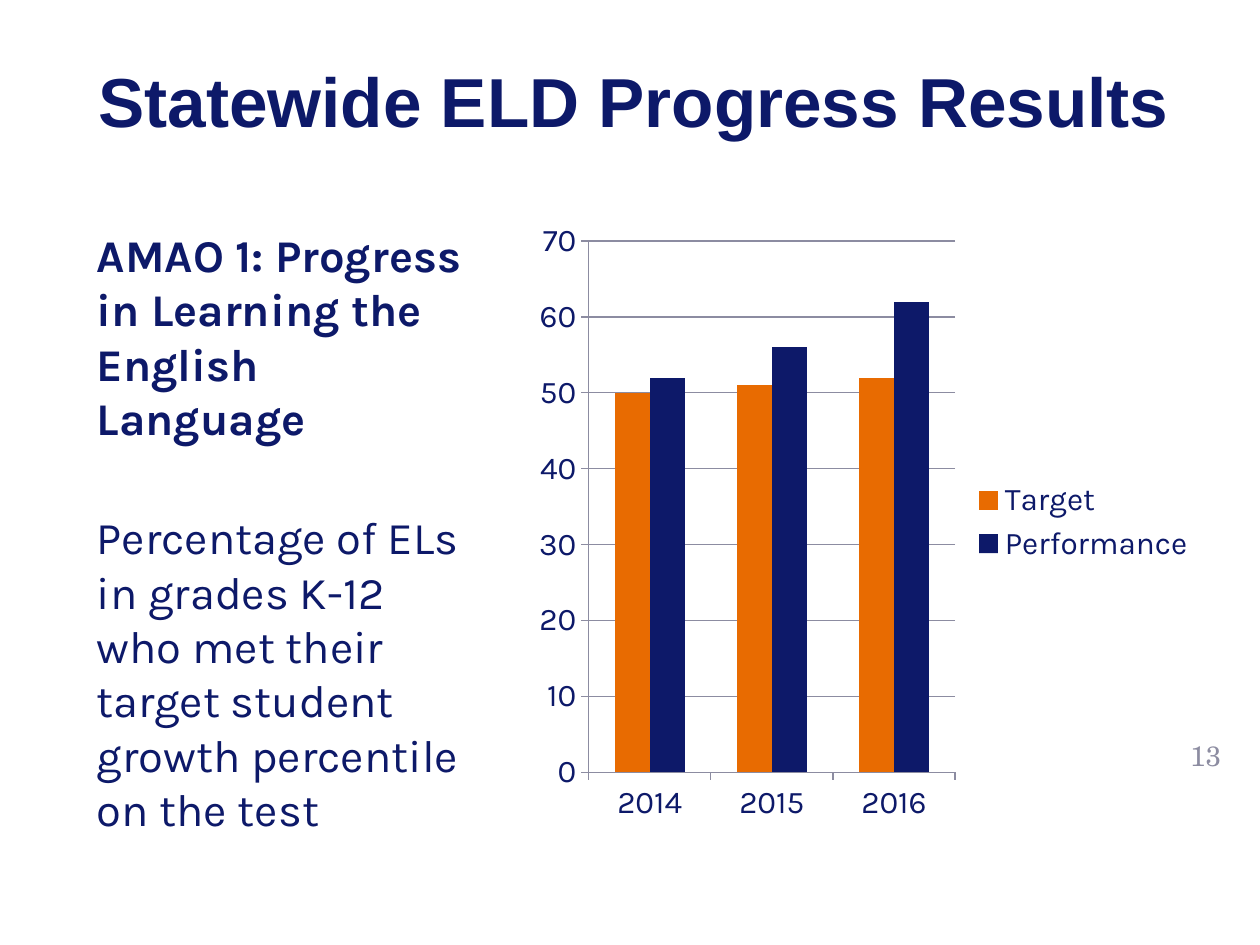
from pptx import Presentation
from pptx.chart.data import CategoryChartData as Data
from pptx.dml.color import RGBColor as Rgb
from pptx.enum.chart import XL_CHART_TYPE as Kind, XL_LEGEND_POSITION as Side, XL_TICK_MARK as Tick
from pptx.enum.text import MSO_ANCHOR as Anchor, PP_ALIGN as Align
from pptx.util import Cm, Pt

NAVY, ORANGE, GREY = "0D1969", "E86B01", "8C8CA1"
TITLE = ["Statewide ELD Progress Results"]
BODY = ["AMAO 1: Progress in Learning the English Language",
        "Percentage of ELs in grades K-12 who met their target student "
        "growth percentile on the test"]
PAGE = ["13"]
YEARS = ["2014", "2015", "2016"]
SERIES = [("Target", [50, 51, 52], ORANGE), ("Performance", [52, 56, 62], NAVY)]


def style(font, face, size, tint, bold=False):
    """Set the face, size, colour and weight of a font."""
    font.name, font.size, font.bold = face, Pt(size), bold
    font.color.rgb = Rgb.from_string(tint)


def write(slide, box, lines, face, size, tint, bold=0, gap=0,
          align=Align.CENTER, anchor=Anchor.MIDDLE):
    """Add a text box whose first `bold` paragraphs are bold."""
    frame = slide.shapes.add_textbox(*map(Cm, box)).text_frame
    frame.word_wrap, frame.vertical_anchor = True, anchor
    frame.text = "\n".join(lines)
    for i, para in enumerate(frame.paragraphs):
        para.alignment = align
        style(para.font, face, size, tint, i < bold)
        if i:
            para.space_before = Pt(gap)


def plot(slide, box):
    """Add the column chart of targets and performance."""
    data = Data()
    data.categories = YEARS
    for name, vals, _ in SERIES:
        data.add_series(name, vals)
    chart = slide.shapes.add_chart(Kind.COLUMN_CLUSTERED, *map(Cm, box), data).chart
    style(chart.font, "Karla", 18, NAVY)
    chart.has_title = False
    chart.has_legend = True
    chart.legend.position = Side.RIGHT
    chart.legend.include_in_layout = False
    bars = chart.plots[0]
    bars.vary_by_categories, bars.gap_width, bars.overlap = False, 150, 0
    for bar, (_, _, tint) in zip(bars.series, SERIES):
        bar.format.fill.solid()
        bar.format.fill.fore_color.rgb = Rgb.from_string(tint)
    scale = chart.value_axis
    scale.minimum_scale, scale.maximum_scale, scale.major_unit = 0, 70, 10
    scale.has_major_gridlines = True
    for axis in (chart.category_axis, scale):
        axis.major_tick_mark = Tick.OUTSIDE
    for part in (chart.category_axis, scale, scale.major_gridlines):
        part.format.line.color.rgb = Rgb.from_string(GREY)
        part.format.line.width = Pt(0.75)


def main():
    """Build the slide and save it."""
    deck = Presentation()
    deck.slide_width, deck.slide_height = Cm(25.4), Cm(19.05)
    slide = deck.slides.add_slide(deck.slide_layouts[6])
    write(slide, (0.84, 0.43, 23.88, 3.18), TITLE, "Arial", 39.6, NAVY, bold=1)
    write(slide, (1.7, 4.45, 8.05, 12.37), BODY, "Karla", 25.9, NAVY, bold=1,
          gap=37, align=Align.LEFT, anchor=Anchor.TOP)
    plot(slide, (10.59, 4.24, 13.77, 12.57))
    write(slide, (23.57, 14.6, 1.47, 1.27), PAGE, "TeX Gyre Schola", 16, GREY)
    deck.save("out.pptx")


if __name__ == "__main__":
    main()
